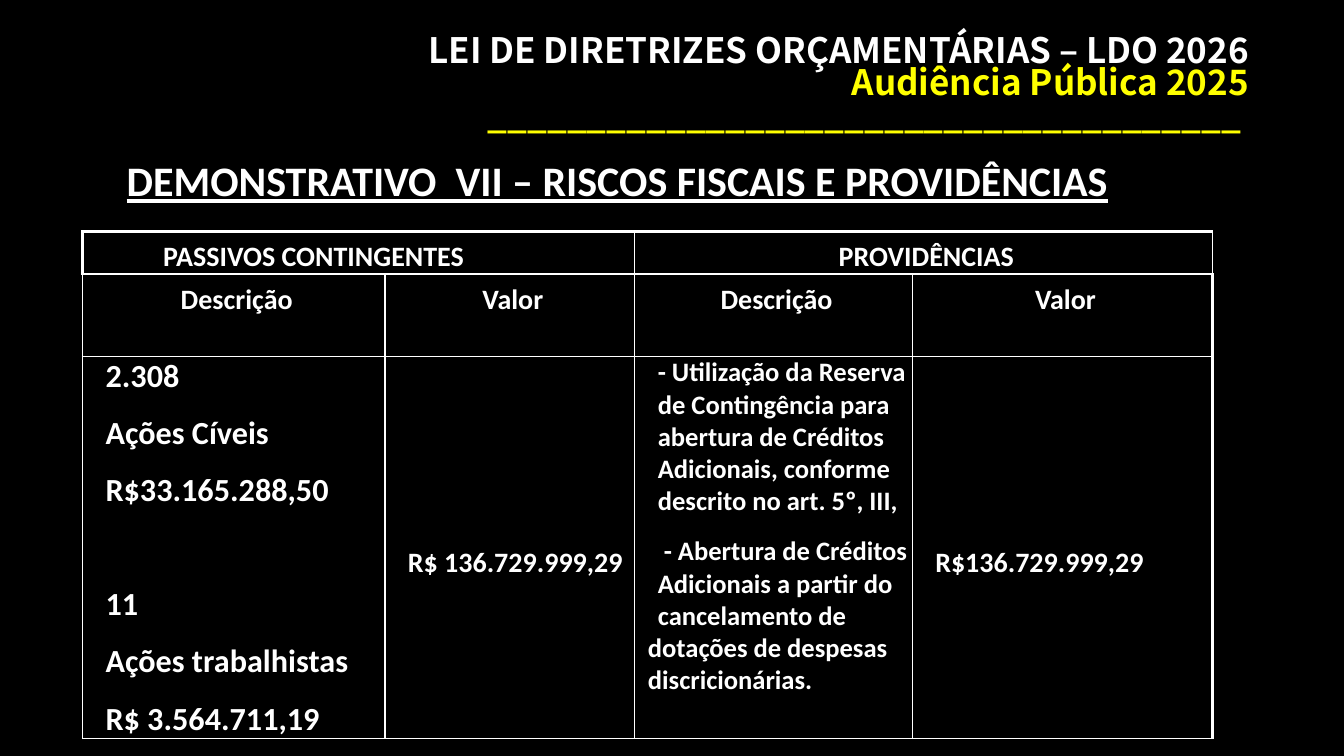
import pptx
import pptx.dml.color
import pptx.enum.text
import pptx.oxml
import pptx.oxml.ns
import pptx.util
from pptx.util import Cm

COLORS = {"background": "000000", "text": "FFFFFF", "accent": "FFFF00"}
ALIGN = pptx.enum.text.PP_ALIGN
ANCHOR = pptx.enum.text.MSO_ANCHOR
AUTO_SIZE = pptx.enum.text.MSO_AUTO_SIZE


def rgb(name):
    return pptx.dml.color.RGBColor.from_string(COLORS[name])


class BudgetPage:
    body_font = "Calibri"
    title_font = "Noto Sans CJK JP"

    def __init__(self, deck):
        self.page = deck.slides.add_slide(deck.slide_layouts[5])
        fill = self.page.background.fill
        fill.solid()
        fill.fore_color.rgb = rgb("background")

    def style(self, font, size, face=body_font, color="text"):
        font.name = face
        font.size = pptx.util.Pt(size)
        font.bold = True
        font.color.rgb = rgb(color)

    def title(self, left, top, width, height, lines):
        box = self.page.shapes.title
        box.left, box.top, box.width, box.height = left, top, width, height
        frame = box.text_frame
        frame.auto_size = AUTO_SIZE.NONE
        frame.vertical_anchor = ANCHOR.MIDDLE
        para = frame.paragraphs[0]
        para.alignment = ALIGN.RIGHT
        para.line_spacing = 0.77
        self.style(para.font, 25, self.title_font)
        for text, color in lines:
            span = para.add_run()
            span.text = text
            self.style(span.font, 25, self.title_font, color)
            para.add_line_break()

    def heading(self, left, top, width, height, text):
        box = self.page.shapes.add_textbox(left, top, width, height)
        frame = box.text_frame
        frame.word_wrap = True
        frame.auto_size = AUTO_SIZE.SHAPE_TO_FIT_TEXT
        para = frame.paragraphs[0]
        para.text = text
        para.alignment = ALIGN.CENTER
        self.style(para.font, 30)
        para.font.underline = True

    def table(self, left, top, widths, heights):
        frame = self.page.shapes.add_table(
            len(heights), len(widths), left, top, sum(widths), sum(heights))
        table = frame.table
        table.first_row = table.horz_banding = False
        for column, width in zip(table.columns, widths):
            column.width = width
        for row, height in zip(table.rows, heights):
            row.height = height
        last = len(widths) - 1
        for r in range(len(heights)):
            for c in range(len(widths)):
                cell = table.cell(r, c)
                cell.fill.background()
                thick = {"L": r == 0 and c == 0, "R": c == last, "T": r == 0, "B": False}
                self.borders(cell, thick)
        return table

    def borders(self, cell, thick):
        properties = cell._tc.get_or_add_tcPr()
        for index, (side, is_thick) in enumerate(thick.items()):
            width = pptx.util.Pt(2.25 if is_thick else 1)
            properties.insert(index, pptx.oxml.parse_xml(
                f'<a:ln{side} {pptx.oxml.ns.nsdecls("a")} w="{width}"><a:solidFill>'
                f'<a:srgbClr val="{COLORS["text"]}"/></a:solidFill></a:ln{side}>'))

    def cell(self, cell, items, size=20, align=ALIGN.LEFT, top=0):
        cell.margin_left = cell.margin_right = cell.margin_bottom = 0
        cell.margin_top = Cm(top)
        frame = cell.text_frame
        for index, (text, indent, before) in enumerate(items):
            para = frame.add_paragraph() if index else frame.paragraphs[0]
            para.text = text
            para.alignment = align
            para._p.get_or_add_pPr().set("marL", str(Cm(indent)))
            para.space_before = pptx.util.Pt(before)
            self.style(para.font, size)


def main():
    deck = pptx.Presentation()
    deck.slide_width, deck.slide_height = Cm(33.87), Cm(19.05)
    page = BudgetPage(deck)
    page.title(Cm(2.51), Cm(0.86), Cm(29.21), Cm(3.68), [
        ("LEI DE DIRETRIZES ORÇAMENTÁRIAS – LDO 2026", "text"),
        ("Audiência Pública 2025", "accent"),
        ("_" * 38 + " ", "accent"),
    ])

    table = page.table(Cm(2.08), Cm(5.84),
                       [Cm(7.62), Cm(6.3), Cm(6.99), Cm(7.57)],
                       [Cm(1.06), Cm(2.08), Cm(9.61)])
    for column in (0, 2):
        table.cell(0, column).merge(table.cell(0, column + 1))
    page.cell(table.cell(0, 0), [("PASSIVOS CONTINGENTES", 2.03, 0)], top=0.2)
    page.cell(table.cell(0, 2), [("PROVIDÊNCIAS", 0.13, 0)], align=ALIGN.CENTER, top=0.2)
    for column, label in enumerate(["Descrição", "Valor"] * 2):
        page.cell(table.cell(1, column), [(label, 0.15, 0)], align=ALIGN.CENTER, top=0.23)

    gap = 12.6
    page.cell(table.cell(2, 0), [
        ("2.308", 0.58, 0),
        ("Ações Cíveis", 0.58, gap),
        ("R$33.165.288,50", 0.58, gap),
        ("11", 0.58, 53.3),
        ("Ações trabalhistas", 0.58, gap),
        ("R$ 3.564.711,19", 0.58, gap),
    ], size=23)
    page.cell(table.cell(2, 2), [
        ("- Utilização da Reserva de Contingência para abertura de Créditos "
         "Adicionais, conforme descrito no art. 5º, III,", 0.58, 0),
        (" - Abertura de Créditos Adicionais a partir do cancelamento de", 0.58, gap),
        ("dotações de despesas discricionárias.", 0.33, 0),
    ], size=19)
    for column, amount in ((1, "R$ 136.729.999,29"), (3, "R$136.729.999,29")):
        page.cell(table.cell(2, column), [(amount, 0.58, 0)], top=4.76)

    page.heading(Cm(2.51), Cm(3.78), Cm(26.11), Cm(1.55),
                 "DEMONSTRATIVO  VII – RISCOS FISCAIS E PROVIDÊNCIAS")
    deck.save("out.pptx")


if __name__ == "__main__":
    main()
